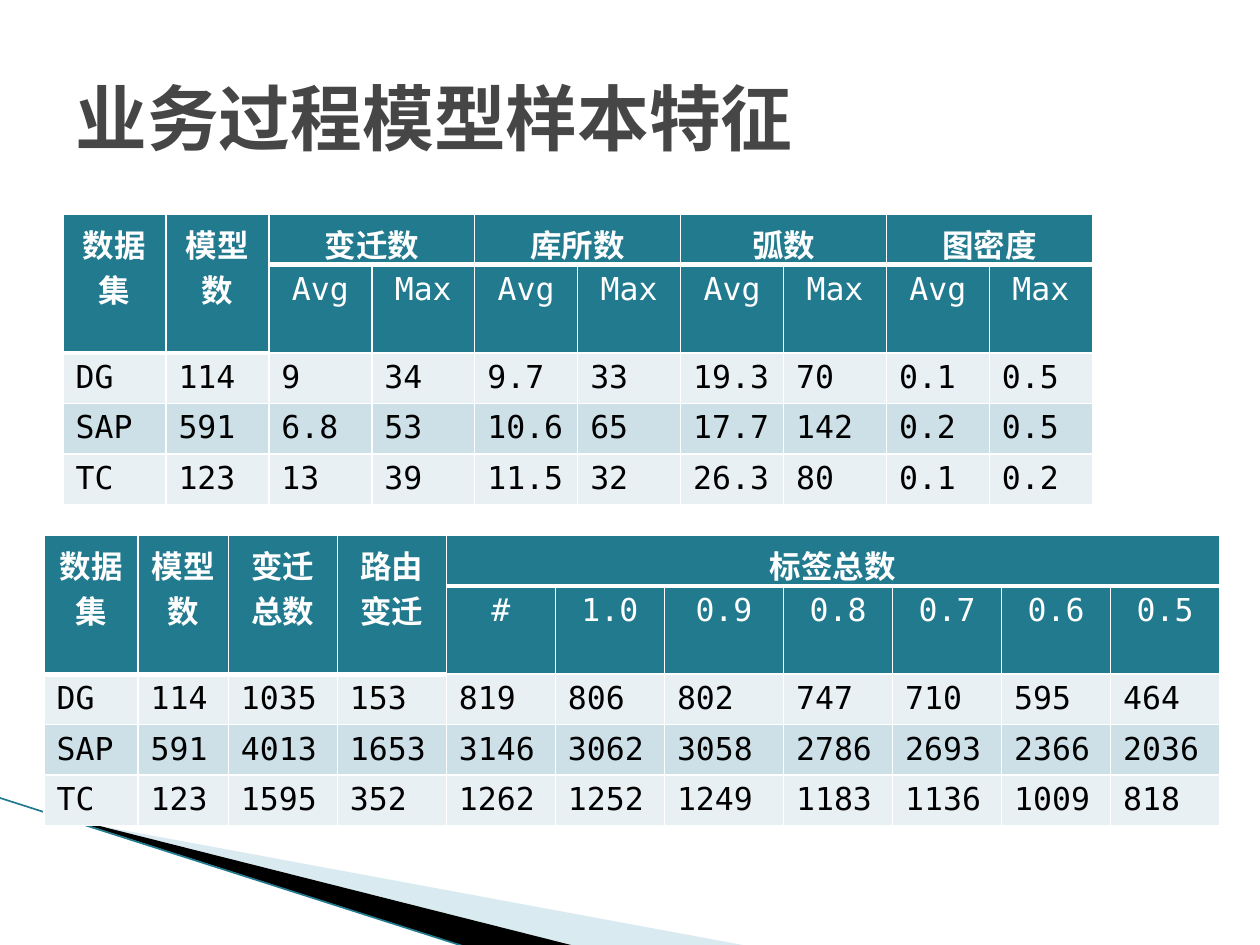
import lxml.etree
import pptx
import pptx.dml.color
import pptx.enum.shapes
import pptx.enum.text
import pptx.oxml
import pptx.oxml.ns
import pptx.util

FONT = "DejaVu Sans Mono"
COLORS = {"title": "464646", "header": "227A8F", "odd": "E8F0F4", "even": "CDE0E8",
          "white": "FFFFFF", "black": "000000", "wedge": "A0CBDC"}
WIDTH, HEIGHT = pptx.util.Inches(10), pptx.util.Inches(7.5)

FEATURES = [
    ["数据集", "模型数", "变迁数", "", "库所数", "", "弧数", "", "图密度", ""],
    ["", ""] + ["Avg", "Max"] * 4,
    "DG 114 9 34 9.7 33 19.3 70 0.1 0.5".split(),
    "SAP 591 6.8 53 10.6 65 17.7 142 0.2 0.5".split(),
    "TC 123 13 39 11.5 32 26.3 80 0.1 0.2".split(),
]
LABELS = [
    ["数据集", "模型数", "变迁总数", "路由变迁", "标签总数"] + [""] * 6,
    [""] * 4 + "# 1.0 0.9 0.8 0.7 0.6 0.5".split(),
    "DG 114 1035 153 819 806 802 747 710 595 464".split(),
    "SAP 591 4013 1653 3146 3062 3058 2786 2693 2366 2036".split(),
    "TC 123 1595 352 1262 1252 1249 1183 1136 1009 818".split(),
]


def rgb(name):
    """Return the named colour as an RGBColor."""
    return pptx.dml.color.RGBColor.from_string(COLORS[name])


def place(x, y):
    """Turn inches on the slide grid into whole EMU."""
    return pptx.util.Inches(x), pptx.util.Inches(y)


def style_run(r, size, color, bold):
    """Set the font of one run."""
    r.font.name, r.font.size, r.font.bold = FONT, pptx.util.Pt(size), bold
    r.font.color.rgb = rgb(color)


def add_wedge(slide, points, color, alpha=None):
    """Draw a filled outline through the points, with optional opacity in percent."""
    start, *rest = [place(*point) for point in points]
    builder = slide.shapes.build_freeform(*start)
    builder.add_line_segments(rest, close=True)
    sp = builder.convert_to_shape()
    sp.shadow.inherit = False
    sp.fill.solid()
    sp.fill.fore_color.rgb = rgb(color)
    sp.line.fill.background()
    if alpha:
        clr = sp._element.spPr.find(".//" + pptx.oxml.ns.qn("a:srgbClr"))
        lxml.etree.SubElement(clr, pptx.oxml.ns.qn("a:alpha")).set("val", str(alpha * 1000))


def add_corner(slide):
    """Draw the slanted decoration at the lower left."""
    add_wedge(slide, [(0.55, 6.51), (5.95, 7.51), (4.56, 7.51), (0.55, 6.5)], "wedge", 40)
    add_wedge(slide, [(0.53, 6.49), (4.57, 7.51), (3.72, 7.52), (0.54, 6.5)], "black")
    line = slide.shapes.add_connector(pptx.enum.shapes.MSO_CONNECTOR.STRAIGHT,
                                      *place(-0.01, 6.33), *place(3.71, 7.52))
    line.line.color.rgb = rgb("header")
    line.line.width = pptx.util.Pt(0.95)
    lxml.etree.SubElement(line._element.spPr, pptx.oxml.ns.qn("a:effectLst"))


def add_title(slide, box, text):
    """Place the slide title in the box."""
    tf = slide.shapes.add_textbox(*place(*box[:2]), *place(*box[2:])).text_frame
    tf.word_wrap = True
    tf.vertical_anchor = pptx.enum.text.MSO_ANCHOR.MIDDLE
    tf.text = text
    r = tf.paragraphs[0].runs[0]
    style_run(r, 41, "title", True)
    ea = lxml.etree.SubElement(r.font._element, pptx.oxml.ns.qn("a:ea"))
    ea.set("typeface", FONT)


def set_borders(cell, widths):
    """Give the cell white borders; widths maps sides to points."""
    tcPr = cell._tc.get_or_add_tcPr()
    for i, (side, width) in enumerate(widths.items()):
        tcPr.insert(i, pptx.oxml.parse_xml(
            f'<a:ln{side} {pptx.oxml.ns.nsdecls("a")} w="{pptx.util.Pt(width)}">'
            f'<a:solidFill><a:srgbClr val="{COLORS["white"]}"/></a:solidFill></a:ln{side}>'))


def fill_cell(cell, text, row):
    """Write and colour one cell according to its row."""
    header = row < 2
    cell.fill.solid()
    cell.fill.fore_color.rgb = rgb("header" if header else "even" if row % 2 else "odd")
    thick = row == 0 or (row == 1 and not text)
    widths = {"L": 1, "R": 1, "T": 1, "B": 3 if thick else 1}
    if row in (1, 2):
        del widths["T"]
    set_borders(cell, widths)
    if text:
        cell.text = text
        p = cell.text_frame.paragraphs[0]
        if header:
            p.alignment = pptx.enum.text.PP_ALIGN.CENTER
        style_run(p.runs[0], 18, "white" if header else "black", row == 0)


def merge_header(table, data):
    """Join header cells down over an empty cell, or across to the next heading."""
    starts = [c for c, text in enumerate(data[0]) if text]
    for start, end in zip(starts, starts[1:] + [len(data[0])]):
        last = (0, end - 1) if data[1][start] else (1, start)
        table.cell(0, start).merge(table.cell(*last))


def add_data_table(slide, box, data, weights, header_height):
    """Build a table with a two-row header, its columns sharing the box width."""
    frame = slide.shapes.add_table(len(data), len(weights), *place(*box[:2]), *place(*box[2:]))
    table = frame.table
    table.first_row = table.horz_banding = False
    for column, weight in zip(table.columns, weights):
        column.width = pptx.util.Inches(box[2] * weight / sum(weights))
    for i, row in enumerate(table.rows):
        row.height = pptx.util.Inches(header_height if i < 2 else 0.4)
    for i, texts in enumerate(data):
        for j, text in enumerate(texts):
            fill_cell(table.cell(i, j), text, i)
    merge_header(table, data)
    frame.height = pptx.util.Inches(box[3])


def main():
    """Build and save the slide."""
    prs = pptx.Presentation()
    prs.slide_width, prs.slide_height = WIDTH, HEIGHT
    slide = prs.slides.add_slide(prs.slide_layouts[6])
    add_corner(slide)
    add_title(slide, (0.5, 0.3, 9, 1.25), "业务过程模型样本特征")
    label_weights = [0.75, 0.72] + [0.87] * 4 + [0.95] + [0.87] * 4
    add_data_table(slide, (0.35, 4.25, 9.33, 2.02), LABELS, label_weights, 0.35)
    add_data_table(slide, (0.5, 1.7, 8.17, 2.02), FEATURES, [1] * 10, 0.2)
    prs.save("out.pptx")


if __name__ == "__main__":
    main()
